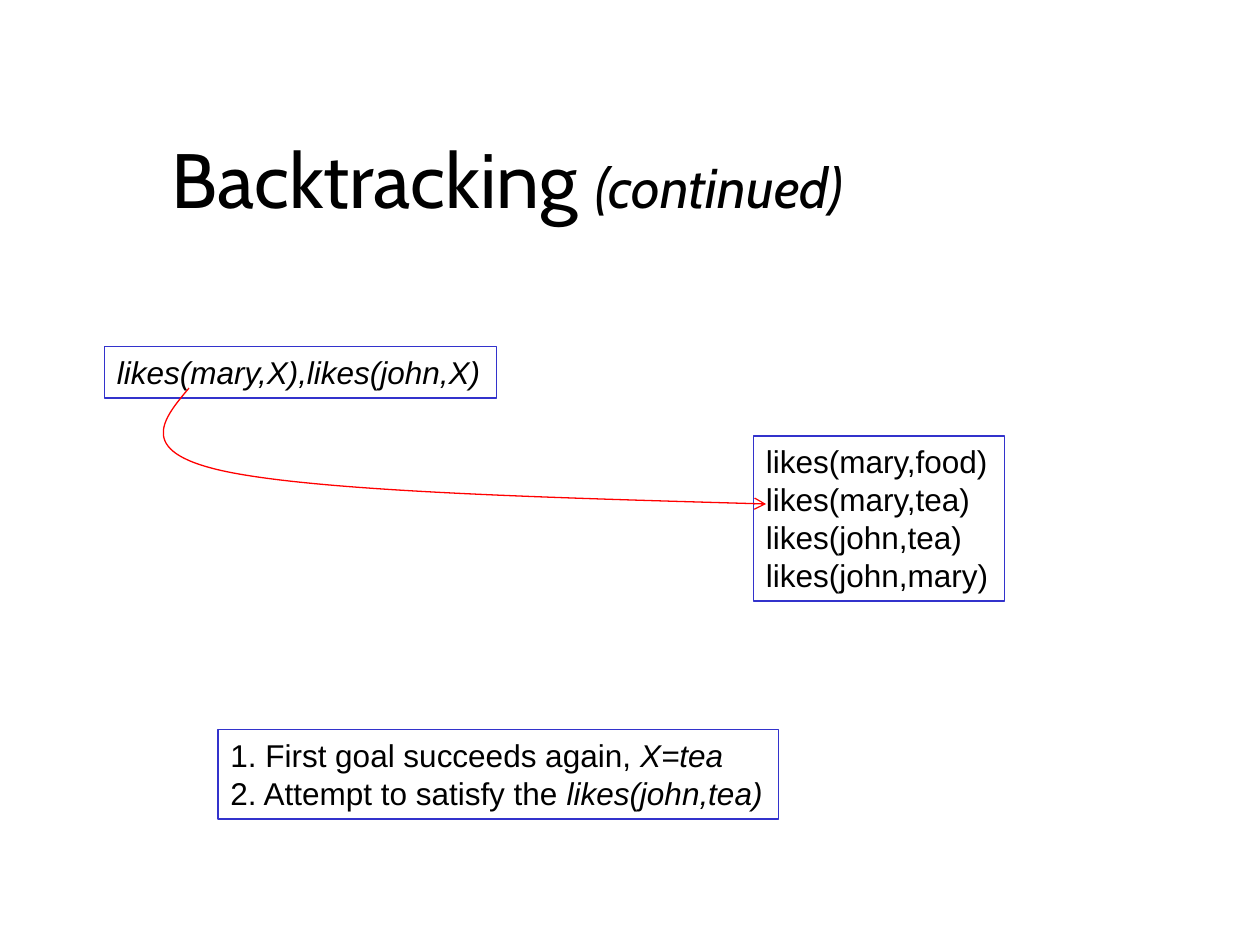
from lxml.etree import SubElement
from pptx import Presentation
from pptx.dml.color import RGBColor
from pptx.enum.text import MSO_ANCHOR, MSO_AUTO_SIZE, PP_ALIGN
from pptx.oxml.ns import qn
from pptx.util import Inches, Pt

COLORS = {"text": "000000", "border": "3333CC", "arrow": "FF0000"}
BODY = {"name": "Arial", "size": Pt(18), "italic": False}
ITALIC = {**BODY, "italic": True}
TITLE = {"name": "Cabin", "size": Pt(44), "italic": False}
SUBTITLE = {**TITLE, "size": Pt(32), "italic": True}

FACTS = ["likes(mary,food)", "likes(mary,tea)", "likes(john,tea)", "likes(john,mary)"]
STEPS = [
    [("1. First goal succeeds again, ", BODY), ("X=tea", ITALIC)],
    [("2. Attempt to satisfy the ", BODY), ("likes(john,tea)", ITALIC)],
]
# Start point, then two control points and an end point for each curve
GOAL_TO_FACT = [(1.5, 3.08), (1.28, 3.34), (1.07, 3.6), (1.83, 3.75),
                (2.6, 3.9), (4.34, 3.95), (6.08, 4)]


def color(name):
    return RGBColor.from_string(COLORS[name])


def set_line(s, name):
    s.line.color.rgb = color(name)
    s.line.width = Pt(0.75)


def write_lines(tf, lines):
    """Fill a text frame with lines, each a list of (text, font format) pairs."""
    for i, line in enumerate(lines):
        p = tf.paragraphs[0] if i == 0 else tf.add_paragraph()
        p.alignment = PP_ALIGN.LEFT
        for text, fmt in line:
            r = p.add_run()
            r.text = text
            r.font.color.rgb = color("text")
            for key, value in fmt.items():
                setattr(r.font, key, value)


def add_title(slide, box, line):
    s = slide.shapes.title
    s.left, s.top, s.width, s.height = map(Inches, box)
    s.text_frame.vertical_anchor = MSO_ANCHOR.BOTTOM
    write_lines(s.text_frame, [line])


def add_framed_text(slide, box, lines):
    s = slide.shapes.add_textbox(*map(Inches, box))
    set_line(s, "border")
    s.text_frame.word_wrap = False
    s.text_frame.auto_size = MSO_AUTO_SIZE.SHAPE_TO_FIT_TEXT
    write_lines(s.text_frame, lines)


def add_curved_arrow(slide, points):
    """Draw the control polygon, then turn every three segments into one curve."""
    start, *rest = [(Inches(x), Inches(y)) for x, y in points]
    builder = slide.shapes.build_freeform(*start)
    builder.add_line_segments(rest, close=False)
    s = builder.convert_to_shape()
    s.shadow.inherit = False
    s.fill.background()
    set_line(s, "arrow")

    outline = next(s.element.iter(qn("a:path")))
    segments = outline.findall(qn("a:lnTo"))
    for i in range(0, len(segments), 3):
        curve = SubElement(outline, qn("a:cubicBezTo"))
        for segment in segments[i:i + 3]:
            curve.append(segment[0])
            outline.remove(segment)
    SubElement(s.line._get_or_add_ln(), qn("a:tailEnd"), type="arrow")


def main():
    prs = Presentation()
    prs.slide_width, prs.slide_height = Inches(10), Inches(7.5)
    slide = prs.slides.add_slide(prs.slide_layouts[5])

    add_title(slide, (1.26, 0.23, 8.52, 1.6),
              [("Backtracking ", TITLE), ("(continued)", SUBTITLE)])
    add_framed_text(slide, (0.83, 2.75, 3.11, 0.41),
                    [[("likes(mary,X),likes(john,X)", ITALIC)]])
    add_framed_text(slide, (5.98, 3.46, 1.99, 1.31),
                    [[(fact, BODY)] for fact in FACTS])
    add_framed_text(slide, (1.73, 5.79, 4.45, 0.71), STEPS)
    add_curved_arrow(slide, GOAL_TO_FACT)

    prs.save("out.pptx")


if __name__ == "__main__":
    main()
